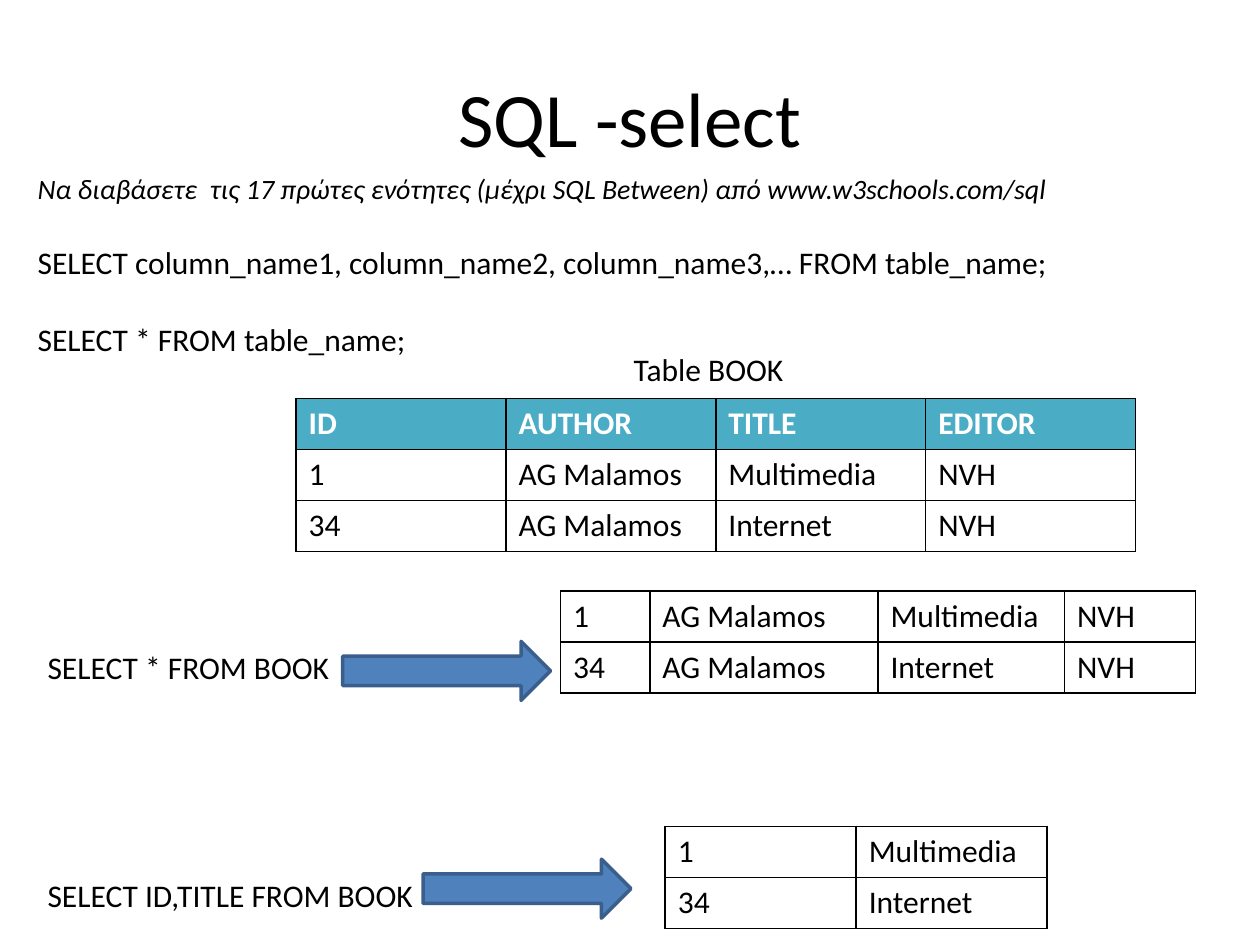
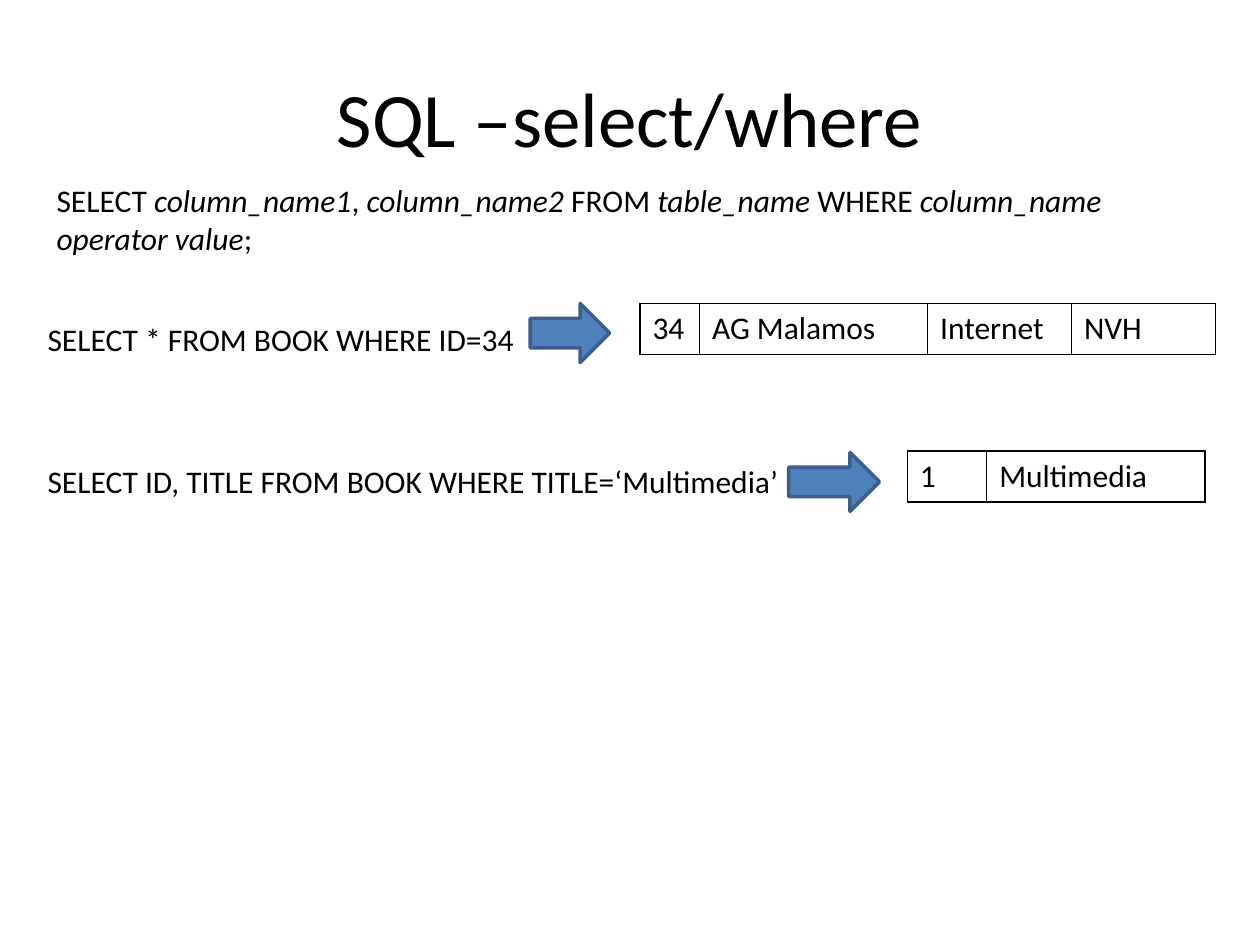
from dataclasses import dataclass
from typing import Any

from lxml import etree
from pptx import Presentation
from pptx import util as u
from pptx.dml.color import RGBColor
from pptx.enum import shapes, text
from pptx.oxml import ns


@dataclass(frozen=True)
class Theme:
    font: str = "Calibri"
    ink: str = "000000"
    header_ink: str = "FFFFFF"
    header_fill: str = "4BACC6"
    arrow_fill: str = "4F81BD"
    arrow_line: str = "3A5F8C"
    title: float = 44
    body: float = 18
    note: float = 16
    blank_line: float = 22
    grid_line: float = 1
    arrow_border: float = 2


@dataclass(frozen=True)
class Run:
    words: str
    italic: bool = False
    size: float = 18


@dataclass(frozen=True)
class Grid:
    left: float
    top: float
    widths: tuple[float, ...]
    rows: tuple[tuple[str, ...], ...]
    header: bool = False


@dataclass(frozen=True)
class Query:
    command: str
    top: float
    width: float
    arrow_left: float
    arrow_top: float
    arrow_width: float
    result: Grid


THEME = Theme()
ROW_HEIGHT = 1.03
ARROW_HEIGHT = 1.19
QUERY_LEFT = 0.71
FIRST_BOOK = ("1", "AG Malamos", "Multimedia", "NVH")
SECOND_BOOK = ("34", "AG Malamos", "Internet", "NVH")


def apply(target: Any, values: dict[str, Any]) -> None:
    for name, value in values.items():
        setattr(target, name, value)


def style_font(font: Any, size: float, color: str = THEME.ink,
               bold: bool = False, italic: bool = False) -> None:
    apply(font, {"name": THEME.font, "size": u.Pt(size), "bold": bold, "italic": italic})
    font.color.rgb = RGBColor.from_string(color)


def add_text(slide: Any, box: tuple[float, ...], paragraphs: list[list[Run]],
             align: Any = text.PP_ALIGN.LEFT, anchor: Any = text.MSO_ANCHOR.TOP) -> None:
    frame = slide.shapes.add_textbox(*map(u.Cm, box)).text_frame
    apply(frame, {"word_wrap": True, "vertical_anchor": anchor})
    for index, runs in enumerate(paragraphs):
        paragraph = frame.add_paragraph() if index else frame.paragraphs[0]
        paragraph.alignment = align
        if index:
            paragraph.space_before = u.Pt(THEME.blank_line)
        for part in runs:
            run = paragraph.add_run()
            run.text = part.words
            style_font(run.font, part.size, italic=part.italic)


def add_title(slide: Any, words: str) -> None:
    add_text(slide, (1.27, 0.76, 22.86, 3.18), [[Run(words, size=THEME.title)]],
             text.PP_ALIGN.CENTER, text.MSO_ANCHOR.MIDDLE)


def add_borders(cell: Any) -> None:
    properties = cell._tc.get_or_add_tcPr()
    for index, side in enumerate(("a:lnL", "a:lnR", "a:lnT", "a:lnB")):
        line = etree.Element(ns.qn(side), w=str(u.Pt(THEME.grid_line)))
        fill = etree.SubElement(line, ns.qn("a:solidFill"))
        etree.SubElement(fill, ns.qn("a:srgbClr"), val=THEME.ink)
        properties.insert(index, line)


def add_grid(slide: Any, grid: Grid) -> None:
    box = (grid.left, grid.top, sum(grid.widths), ROW_HEIGHT * len(grid.rows))
    table = slide.shapes.add_table(len(grid.rows), len(grid.widths), *map(u.Cm, box)).table
    apply(table, {"first_row": grid.header, "horz_banding": False})
    for column, width in zip(table.columns, grid.widths):
        column.width = u.Cm(width)
    for row_index, values in enumerate(grid.rows):
        table.rows[row_index].height = u.Cm(ROW_HEIGHT)
        heading = grid.header and row_index == 0
        for column_index, value in enumerate(values):
            cell = table.cell(row_index, column_index)
            cell.text = value
            run = cell.text_frame.paragraphs[0].runs[0]
            style_font(run.font, THEME.body, THEME.header_ink if heading else THEME.ink, heading)
            if heading:
                cell.fill.solid()
                cell.fill.fore_color.rgb = RGBColor.from_string(THEME.header_fill)
            else:
                cell.fill.background()
            add_borders(cell)


def add_query(slide: Any, query: Query) -> None:
    add_text(slide, (QUERY_LEFT, query.top, query.width, ROW_HEIGHT), [[Run(query.command)]])
    box = (query.arrow_left, query.arrow_top, query.arrow_width, ARROW_HEIGHT)
    arrow = slide.shapes.add_shape(shapes.MSO_SHAPE.RIGHT_ARROW, *map(u.Cm, box))
    arrow.shadow.inherit = False
    arrow.fill.solid()
    arrow.fill.fore_color.rgb = RGBColor.from_string(THEME.arrow_fill)
    arrow.line.color.rgb = RGBColor.from_string(THEME.arrow_line)
    arrow.line.width = u.Pt(THEME.arrow_border)
    add_grid(slide, query.result)


def build_select(slide: Any) -> None:
    add_title(slide, "SQL -select")
    add_text(slide, (0.51, 3.33, 24.69, 4.11), [
        [Run("Να διαβάσετε  τις 17 πρώτες ενότητες (μέχρι SQL Between) από www.w3schools.com/sql",
             True, THEME.note)],
        [Run("SELECT column_name1, column_name2, column_name3,… FROM table_name;")],
        [Run("SELECT * FROM table_name;")],
    ])
    add_grid(slide, Grid(5.97, 8.03, (4.23,) * 4,
                         (("ID", "AUTHOR", "TITLE", "EDITOR"), FIRST_BOOK, SECOND_BOOK), True))
    add_text(slide, (5.89, 6.93, 16.79, ROW_HEIGHT), [[Run("Table BOOK")]], text.PP_ALIGN.CENTER)
    add_query(slide, Query("SELECT * FROM BOOK", 12.93, 6.53, 6.91, 12.93, 4.19,
                           Grid(11.3, 11.91, (1.8, 4.6, 3.76, 2.64), (FIRST_BOOK, SECOND_BOOK))))
    add_query(slide, Query("SELECT ID,TITLE FROM BOOK", 17.53, 7.95, 8.53, 17.32, 4.19,
                           Grid(13.41, 16.66, (3.85,) * 2, (FIRST_BOOK[::2], SECOND_BOOK[::2]))))


def build_where(slide: Any) -> None:
    add_title(slide, "SQL –select/where")
    add_text(slide, (0.89, 3.53, 22.81, 1.8), [[
        Run("SELECT "), Run("column_name1", True), Run(", "), Run("column_name2 ", True),
        Run("FROM "), Run("table_name ", True), Run("WHERE "),
        Run("column_name operator value", True), Run(";"),
    ]])
    add_query(slide, Query("SELECT * FROM BOOK WHERE ID=34", 6.32, 10.16, 10.69, 6.12, 1.6,
                           Grid(12.9, 6.12, (1.2, 4.6, 2.9, 2.9), (SECOND_BOOK,))))
    add_query(slide, Query("SELECT ID, TITLE FROM BOOK WHERE TITLE=‘Multimedia’",
                           9.19, 15.54, 15.9, 9.12, 1.83,
                           Grid(18.29, 9.09, (1.6, 4.4), (FIRST_BOOK[::2],))))


def main() -> None:
    presentation = Presentation()
    apply(presentation, {"slide_width": u.Cm(25.4), "slide_height": u.Cm(19.05)})
    for build in (build_select, build_where):
        build(presentation.slides.add_slide(presentation.slide_layouts[6]))
    presentation.save("out.pptx")


if __name__ == "__main__":
    main()
